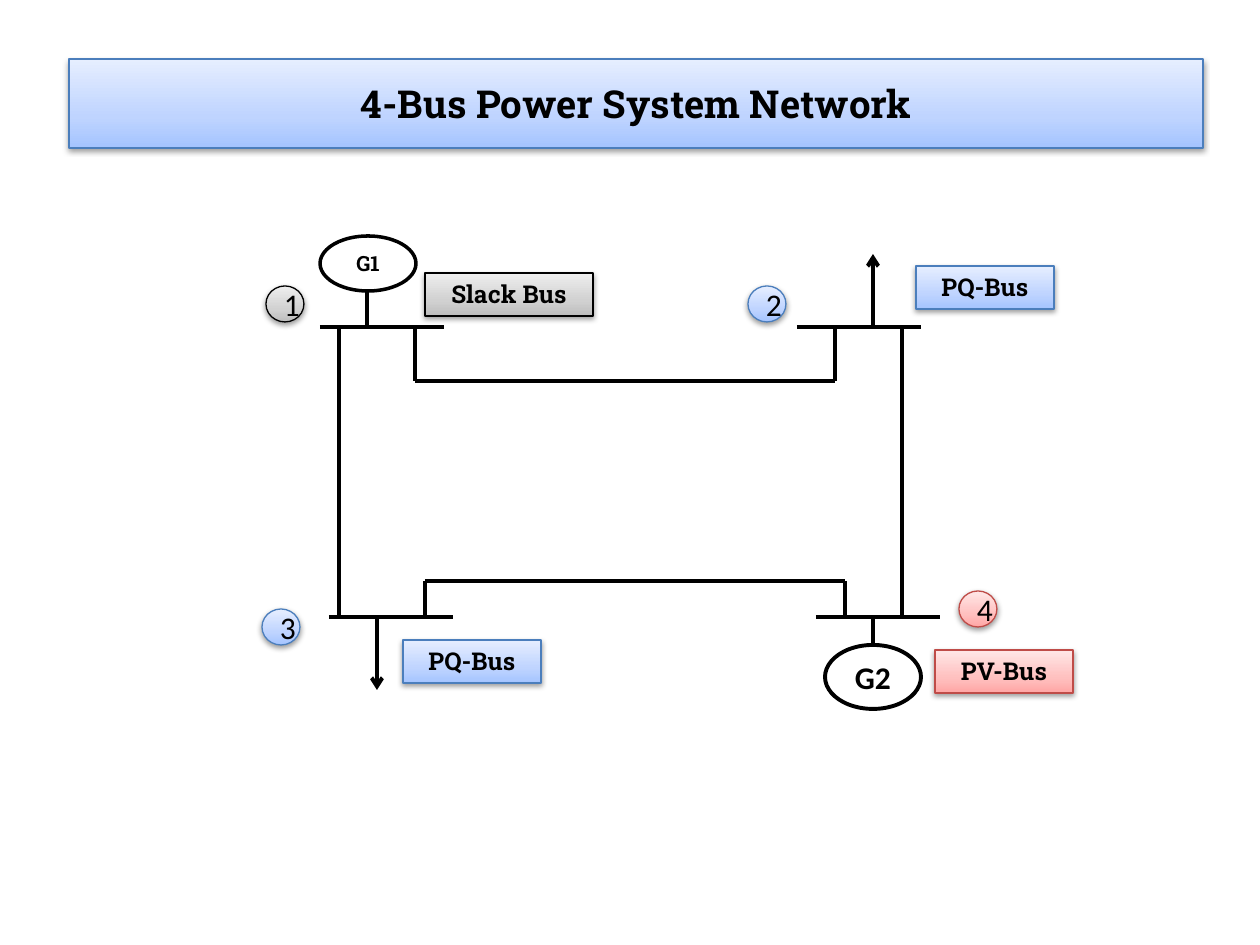
from copy import deepcopy
from itertools import pairwise

from lxml import etree
from pptx import Presentation
from pptx import util as u
from pptx.dml.color import RGBColor
from pptx.enum import shapes, text
from pptx.oxml.ns import qn

COLOURS = {"ink": "000000", "paper": "FFFFFF"}
THEMES = {
    "grey": {"line": "000000", "stops": ("BDBDBD", "D1D1D1", "EEEEEE")},
    "blue": {"line": "4B7EBC", "stops": ("A4C4FF", "BFD4FF", "E6EEFF")},
    "red": {"line": "BF4C48", "stops": ("FFA6A5", "FFC0BF", "FFE7E7")},
}
POSITIONS = (0, 0.35, 1)
SLAB, SANS = "Roboto Slab", "Calibri"
RECT, OVAL = shapes.MSO_SHAPE.RECTANGLE, shapes.MSO_SHAPE.OVAL
TOP, MIDDLE = text.MSO_ANCHOR.TOP, text.MSO_ANCHOR.MIDDLE

UPPER, LOWER = 327, 617
BUS_WIDTH = 124
BUSES = [(320, UPPER), (797, UPPER), (329, LOWER), (816, LOWER)]
ROUTES = [
    [(339, UPPER), (339, LOWER)],
    [(902, UPPER), (902, LOWER)],
    [(415, UPPER), (415, 381), (835, 381), (835, UPPER)],
    [(425, LOWER), (425, 581), (845, 581), (845, LOWER)],
    [(367, 291), (367, UPPER)],
    [(873, LOWER), (873, 645)],
]
LOADS = [[(873, UPPER), (873, 254)], [(377, LOWER), (377, 690)]]
GENERATORS = [
    ("G1", (320, 236, 96, 55), SLAB, 12, 2),
    ("G2", (825, 645, 96, 64), SANS, 18, 2.25),
]
NUMBERS = [("1", 266, 286, "grey"), ("2", 748, 286, "blue"),
           ("3", 262, 609, "blue"), ("4", 959, 591, "red")]
LABELS = [("Slack Bus", 425, 273, 168, "grey"), ("PQ-Bus", 916, 266, 138, "blue"),
          ("PQ-Bus", 403, 640, 138, "blue"), ("PV-Bus", 935, 650, 138, "red")]


def px(value):
    return u.Emu(round(value * 914400 / 126))


def rgb(value):
    return RGBColor.from_string(value)


class Diagram:
    def __init__(self, page):
        self.page = page
        self.canvas = page.shapes

    def group(self):
        self.canvas = self.page.shapes.add_group_shape().shapes

    def ungroup(self):
        self.canvas = self.page.shapes

    def caption(self, box, words, font, size, bold=True, anchor=MIDDLE):
        frame = box.text_frame
        frame.text = words
        frame.word_wrap = True
        frame.vertical_anchor = anchor
        para = frame.paragraphs[0]
        para.alignment = text.PP_ALIGN.CENTER
        para.font.name = font
        para.font.size = u.Pt(size)
        para.font.bold = bold
        para.font.color.rgb = rgb(COLOURS["ink"])

    def paint(self, box, theme):
        style = THEMES[theme]
        box.fill.gradient()
        box.fill.gradient_angle = 90
        stop_list = box.element.spPr.find(".//" + qn("a:gsLst"))
        stop_list.append(deepcopy(stop_list[0]))
        for stop, colour, position in zip(box.fill.gradient_stops, style["stops"], POSITIONS):
            stop.color.rgb = rgb(colour)
            stop.position = position
        box.line.color.rgb = rgb(style["line"])
        box.line.width = u.Pt(0.75)
        box.shadow.inherit = False
        effects = box.element.spPr.find(qn("a:effectLst"))
        shadow = etree.SubElement(effects, qn("a:outerShdw"), blurRad="40000",
                                  dist="20000", dir="5400000", rotWithShape="0")
        black = etree.SubElement(shadow, qn("a:srgbClr"), val=COLOURS["ink"])
        etree.SubElement(black, qn("a:alpha"), val="38000")

    def title(self, words, area):
        box = self.page.shapes.title
        box.left, box.top, box.width, box.height = map(px, area)
        self.paint(box, "blue")
        self.caption(box, words, SLAB, 22)
        box.text_frame.auto_size = text.MSO_AUTO_SIZE.NONE

    def wire(self, points, arrow=False):
        for start, end in pairwise(points):
            line = self.canvas.add_connector(shapes.MSO_CONNECTOR.STRAIGHT,
                                             *map(px, start + end))
            line.line.color.rgb = rgb(COLOURS["ink"])
            line.line.width = u.Pt(2.25)
            if arrow:
                outline = line.element.spPr.find(qn("a:ln"))
                etree.SubElement(outline, qn("a:tailEnd"), type="arrow")
            etree.SubElement(line.element.spPr, qn("a:effectLst"))

    def generator(self, words, area, font, size, weight):
        box = self.canvas.add_shape(OVAL, *map(px, area))
        box.shadow.inherit = False
        box.fill.solid()
        box.fill.fore_color.rgb = rgb(COLOURS["paper"])
        box.line.color.rgb = rgb(COLOURS["ink"])
        box.line.width = u.Pt(weight)
        self.caption(box, words, font, size)

    def number(self, words, left, top, theme):
        box = self.canvas.add_shape(OVAL, *map(px, (left, top, 38, 36)))
        self.paint(box, theme)
        self.caption(box, words, SANS, 18, bold=False)

    def label(self, words, left, top, width, theme):
        box = self.canvas.add_shape(RECT, *map(px, (left, top, width, 43)))
        self.paint(box, theme)
        self.caption(box, words, SLAB, 14, anchor=TOP)
        box.text_frame.auto_size = text.MSO_AUTO_SIZE.SHAPE_TO_FIT_TEXT


def main():
    deck = Presentation()
    deck.slide_width, deck.slide_height = px(1260), px(945)
    diagram = Diagram(deck.slides.add_slide(deck.slide_layouts[5]))
    diagram.title("4-Bus Power System Network", (69, 59, 1134, 89))
    diagram.group()
    for left, top in BUSES:
        diagram.wire([(left, top), (left + BUS_WIDTH, top)])
    for route in ROUTES:
        diagram.wire(route)
    for load in LOADS:
        diagram.wire(load, arrow=True)
    for generator in GENERATORS:
        diagram.generator(*generator)
    for number in NUMBERS:
        diagram.number(*number)
    diagram.ungroup()
    for label in LABELS:
        diagram.label(*label)
    deck.save("out.pptx")


if __name__ == "__main__":
    main()
